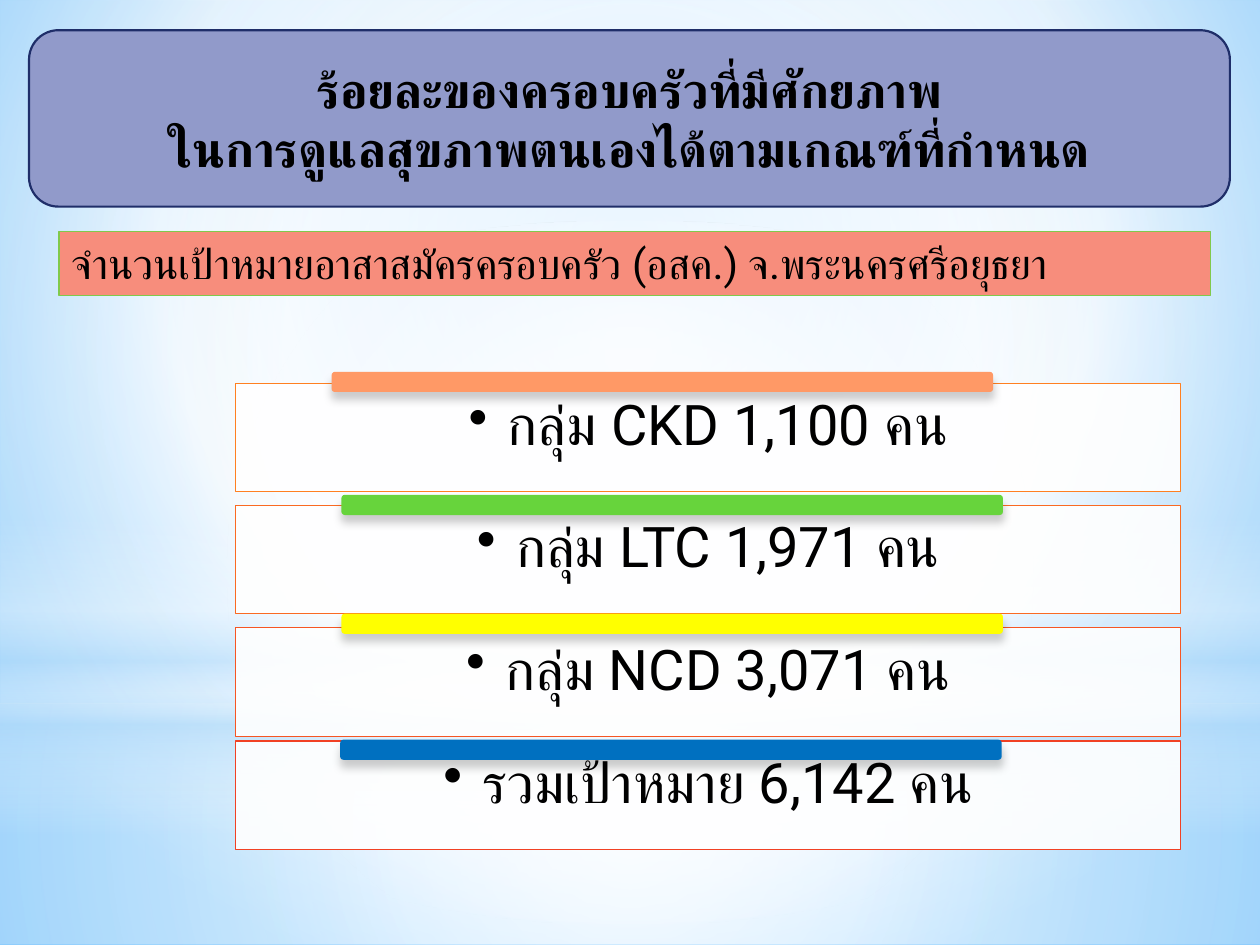
from dataclasses import dataclass

from lxml import etree
from pptx import Presentation
from pptx.dml.color import RGBColor
from pptx.enum.shapes import MSO_SHAPE as Shape
from pptx.enum.text import MSO_ANCHOR as Anchor, PP_ALIGN as Align
from pptx.oxml.ns import qn
from pptx.util import Pt


@dataclass(frozen=True)
class Theme:
    font: str = "Roboto"
    title_size: int = 28
    banner_size: int = 24
    row_size: int = 32
    text: str = "000000"
    white: str = "FFFFFF"
    haze: str = "B4DCFA"
    sky: str = "9ED5FF"
    deep_sky: str = "5BB9FF"
    title_fill: str = "919ACA"
    title_line: str = "1F2E69"
    banner_fill: str = "F78D7C"
    banner_line: str = "81C94B"


THEME = Theme()
WIDTH, HEIGHT = 720, 540
CENTER = (50, 50, 50, 50)

ROWS = [
    ("กลุ่ม CKD 1,100 คน", 219, "FF8021", "FF9966", (54.7, -6.5)),
    ("กลุ่ม LTC 1,971 คน", 288.8, "FA6A22", "67D43C", (60.3, -6)),
    ("กลุ่ม NCD 3,071 คน", 358.7, "F65523", "FFFF00", (60.3, -8)),
    ("รวมเป้าหมาย 6,142 คน", 423.5, "F14124", "0070C0", (59.6, -0.8)),
]


def add_child(parent, tag, **attributes):
    values = {name: str(value) for name, value in attributes.items()}
    return etree.SubElement(parent, qn(tag), values)


def add_color(parent, color, opacity=100):
    node = add_child(parent, "a:srgbClr", val=color)
    if opacity < 100:
        add_child(node, "a:alpha", val=opacity * 1000)


def set_gradient(fill, properties, stops, center=None):
    fill.solid()
    solid = properties.find(qn("a:solidFill"))
    gradient = etree.Element(qn("a:gradFill"), rotWithShape="1")
    stop_list = add_child(gradient, "a:gsLst")
    for position, *color in stops:
        add_color(add_child(stop_list, "a:gs", pos=position * 1000), *color)
    if center:
        circle = add_child(gradient, "a:path", path="circle")
        sides = {side: value * 1000 for side, value in zip("ltrb", center)}
        add_child(circle, "a:fillToRect", **sides)
    else:
        add_child(gradient, "a:lin", ang=5400000, scaled=0)
    properties.replace(solid, gradient)


def add_box(slide, kind, box, fill=None, line=None, line_width=0.75):
    shape = slide.shapes.add_shape(kind, *(Pt(value) for value in box))
    shape.shadow.inherit = False
    if fill:
        shape.fill.solid()
        shape.fill.fore_color.rgb = RGBColor.from_string(fill)
    if line:
        shape.line.color.rgb = RGBColor.from_string(line)
        shape.line.width = Pt(line_width)
    else:
        shape.line.fill.background()
    return shape


def set_text(shape, text, size, align, anchor, bold=False):
    frame = shape.text_frame
    frame.word_wrap = True
    frame.vertical_anchor = anchor
    paragraph = frame.paragraphs[0]
    paragraph.text = text
    paragraph.alignment = align
    font = paragraph.font
    font.name = THEME.font
    font.size = Pt(size)
    font.bold = bold
    font.color.rgb = RGBColor.from_string(THEME.text)
    for run in paragraph.runs:
        run.font.color.rgb = RGBColor.from_string(THEME.text)
    return paragraph


def add_backdrop(slide, box):
    left, top, width, height = box
    white, haze = THEME.white, THEME.haze
    background = slide.background.fill
    background.solid()
    set_gradient(background, slide.element.find(".//" + qn("p:bgPr")),
                 [(0, THEME.sky), (60, white), (100, THEME.deep_sky)],
                 (20, 10, 20, 60))
    horizon = 402
    layers = [
        (Shape.RECTANGLE, horizon, height - horizon, CENTER,
         [(0, white, 91), (37, white, 76), (100, haze, 79)]),
        (Shape.RECTANGLE, 0, horizon, CENTER,
         [(0, white, 89), (48, white, 62), (100, haze, 79)]),
        (Shape.RECTANGLE, 296.6, 180, None,
         [(0, white, 0), (29, white, 30), (45, haze, 40),
          (55, white, 26), (65, haze, 60), (100, white, 0)]),
        (Shape.OVAL, 126, horizon, CENTER,
         [(0, white), (56, white, 0)]),
    ]
    for kind, offset, layer_height, center, stops in layers:
        layer = add_box(slide, kind, (left, top + offset, width, layer_height))
        set_gradient(layer.fill, layer.element.spPr, stops, center)


def add_title(slide, box):
    title = add_box(slide, Shape.ROUNDED_RECTANGLE, box,
                    THEME.title_fill, THEME.title_line, 1.25)
    set_text(title, "ร้อยละของครอบครัวที่มีศักยภาพ\vในการดูแลสุขภาพตนเองได้ตามเกณฑ์ที่กำหนด",
             THEME.title_size, Align.CENTER, Anchor.MIDDLE, bold=True)


def add_banner(slide, box):
    banner = add_box(slide, Shape.RECTANGLE, box,
                     THEME.banner_fill, THEME.banner_line)
    set_text(banner, "จำนวนเป้าหมายอาสาสมัครครอบครัว (อสค.) จ.พระนครศรีอยุธยา",
             THEME.banner_size, Align.LEFT, Anchor.TOP)


def add_row(slide, box, text, line, bar_color, bar_offset):
    left, top, _, _ = box
    panel = add_box(slide, Shape.RECTANGLE, box, THEME.white, line)
    panel_color = panel.element.spPr.find(qn("a:solidFill"))[0]
    add_child(panel_color, "a:alpha", val=90000)
    frame = panel.text_frame
    frame.margin_left = frame.margin_right = Pt(41.8)
    frame.margin_top, frame.margin_bottom = Pt(8), Pt(18)
    paragraph = set_text(panel, text, THEME.row_size, Align.CENTER, Anchor.TOP)
    paragraph.line_spacing = 0.9
    properties = paragraph._p.get_or_add_pPr()
    properties.set("marL", str(Pt(22.5)))
    properties.set("indent", str(Pt(-22.5)))
    bullet = etree.Element(qn("a:buChar"), char="•")
    properties.find(qn("a:defRPr")).addprevious(bullet)

    offset_x, offset_y = bar_offset
    bar = add_box(slide, Shape.ROUNDED_RECTANGLE,
                  (left + offset_x, top + offset_y, 378, 11.5), bar_color)
    effects = bar.element.spPr.find(qn("a:effectLst"))
    shadow = add_child(effects, "a:outerShdw", blurRad=Pt(5), dist=Pt(4),
                       dir=5400000, rotWithShape=0)
    add_color(shadow, "000000", 20)


def main():
    presentation = Presentation()
    presentation.slide_width, presentation.slide_height = Pt(WIDTH), Pt(HEIGHT)
    slide = presentation.slides.add_slide(presentation.slide_layouts[6])
    add_backdrop(slide, (0, 0, WIDTH, HEIGHT))
    add_title(slide, (16.6, 17.3, 686.2, 100.8))
    add_banner(slide, (33.8, 132.4, 658, 36.3))
    for text, top, line, bar_color, bar_offset in ROWS:
        add_row(slide, (134.8, top, 540, 62), text, line, bar_color, bar_offset)
    presentation.save("out.pptx")


if __name__ == "__main__":
    main()
